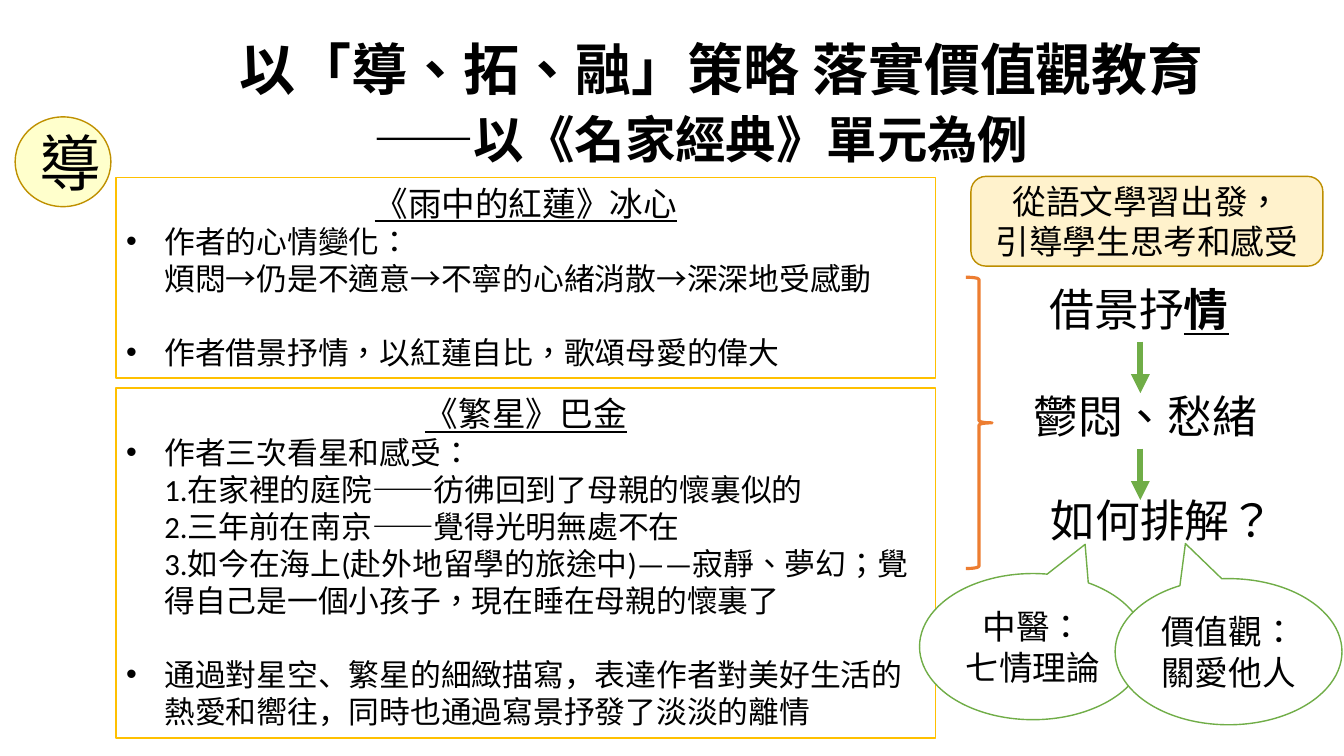
from lxml.etree import SubElement
from pptx import Presentation
from pptx.dml.color import RGBColor
from pptx.enum.lang import MSO_LANGUAGE_ID as Language
from pptx.enum.shapes import MSO_CONNECTOR as Connector, MSO_SHAPE as Shape
from pptx.enum.text import MSO_ANCHOR as Anchor, MSO_AUTO_SIZE as AutoSize, PP_ALIGN as Align
from pptx.oxml.ns import qn
from pptx.util import Inches, Pt

FONT = "Calibri"
BLACK, WHITE, GOLD, GREEN, ORANGE = "000000", "FFFFFF", "FFC000", "70AD47", "ED7D31"
TAIWAN, MAINLAND = Language.TRADITIONAL_CHINESE, Language.SIMPLIFIED_CHINESE

LOTUS_POINTS = [
    ("作者的心情變化：\v煩悶→仍是不適意→不寧的心緒消散→深深地受感動", TAIWAN),
    ("作者借景抒情，以紅蓮自比，歌頌母愛的偉大", TAIWAN),
]
STARS_POINTS = [
    ("作者三次看星和感受：\v1.在家裡的庭院——彷彿回到了母親的懷裏似的"
     "\v2.三年前在南京——覺得光明無處不在"
     "\v3.如今在海上(赴外地留學的旅途中)——寂靜、夢幻；覺得自己是一個小孩子，現在睡在母親的懷裏了",
     TAIWAN),
    ("通過對星空、繁星的細緻描寫，表達作者對美好生活的熱愛和嚮往，同時也通過寫景抒發了淡淡的離情",
     MAINLAND),
]


def color(hex_string):
    """Turn a hex string into a colour."""
    return RGBColor.from_string(hex_string)


def place(box, left, top, width, height):
    """Move and size a box, in inches."""
    box.left, box.top = Inches(left), Inches(top)
    box.width, box.height = Inches(width), Inches(height)


def outline(box, fill, line, weight=1):
    """Fill and outline a box; no fill colour leaves it open."""
    if fill:
        box.fill.solid()
        box.fill.fore_color.rgb = color(fill)
    else:
        box.fill.background()
    box.line.color.rgb = color(line)
    box.line.width = Pt(weight)


def style(para, size, align=Align.CENTER, bold=False, language=TAIWAN):
    """Set the alignment and font of a paragraph."""
    para.alignment = align
    para.font.name = FONT
    para.font.size = Pt(size)
    para.font.bold = bold
    para.font.color.rgb = color(BLACK)
    para.font.language_id = language


def set_bullet(para, char=None):
    """Give a paragraph a hanging bullet, or none."""
    props = para._p.get_or_add_pPr()
    indent = Inches(0.38) if char else 0
    props.set("marL", str(indent))
    props.set("indent", str(-indent))
    if char:
        SubElement(props, qn("a:buFont"), typeface="Arial")
        SubElement(props, qn("a:buChar"), char=char)
    else:
        SubElement(props, qn("a:buNone"))


def fill_heading(box, bounds, text, size):
    """Place a bold centred heading line."""
    place(box, *bounds)
    frame = box.text_frame
    frame.word_wrap = True
    frame.auto_size = AutoSize.NONE
    frame.vertical_anchor = Anchor.TOP
    para = frame.paragraphs[0]
    para.text = text
    para.line_spacing = 1.1
    style(para, size, bold=True)


def fill_reading(box, top, height, heading, points):
    """Fill a framed list with an underlined heading and bullet points."""
    place(box, 1.15, top, 8.13, height)
    outline(box, WHITE, GOLD)
    frame = box.text_frame
    frame.auto_size = AutoSize.NONE
    frame.vertical_anchor = Anchor.TOP
    para = frame.paragraphs[0]
    para.text = heading
    para.space_before = Pt(0)
    set_bullet(para)
    style(para, 24)
    para.font.underline = True
    for number, (text, language) in enumerate(points):
        para = frame.add_paragraph()
        para.text = text
        para.space_before = Pt(26.5 if number else 0)
        set_bullet(para, "•")
        style(para, 22, Align.LEFT, language=language)


def add_figure(slide, kind, bounds, fill, line, lines=(), size=24, weight=1, adjust=()):
    """Add a preset shape with centred lines of text."""
    figure = slide.shapes.add_shape(kind, *map(Inches, bounds))
    figure.shadow.inherit = False
    outline(figure, fill, line, weight)
    for index, value in enumerate(adjust):
        figure.adjustments[index] = value
    frame = figure.text_frame
    frame.vertical_anchor = Anchor.MIDDLE
    for index, text in enumerate(lines):
        para = frame.add_paragraph() if index else frame.paragraphs[0]
        para.text = text
        style(para, size)


def add_step(slide, left, top, width, text, stressed=""):
    """Add one step of the reasoning, with an optional stressed ending."""
    box = slide.shapes.add_textbox(Inches(left), Inches(top), Inches(width), Inches(0.64))
    box.text_frame.word_wrap = False
    para = box.text_frame.paragraphs[0]
    para.text = text
    style(para, 32, Align.LEFT)
    if stressed:
        span = para.add_run()
        span.text = stressed
        span.font.bold = True
        span.font.underline = True


def add_arrow(slide, left, top, length):
    """Add a thick downward arrow."""
    arrow = slide.shapes.add_connector(
        Connector.STRAIGHT, Inches(left), Inches(top), Inches(left), Inches(top + length))
    arrow.line.color.rgb = color(GREEN)
    arrow.line.width = Pt(4.5)
    SubElement(arrow.line._get_or_add_ln(), qn("a:tailEnd"), type="triangle")
    SubElement(arrow._element.spPr, qn("a:effectLst"))


def main():
    """Build the slide and save it."""
    deck = Presentation()
    deck.slide_width, deck.slide_height = Inches(13.33), Inches(7.5)
    slide = deck.slides.add_slide(deck.slide_layouts.get_by_name("Two Content"))
    title, lotus, stars = slide.placeholders

    fill_heading(title, (1.55, 0.23, 11.22, 0.7), "以「導、拓、融」策略 落實價值觀教育", 40)
    subtitle = slide.shapes.add_textbox(0, 0, 0, 0)
    fill_heading(subtitle, (3.48, 0.96, 6.94, 0.7), "——以《名家經典》單元為例", 36)
    add_figure(slide, Shape.OVAL, (0.15, 1.16, 0.95, 0.89), "FFFFCC", "BF9000", ["導"], 44)

    fill_reading(lotus, 1.76, 1.99, "《雨中的紅蓮》冰心", LOTUS_POINTS)
    fill_reading(stars, 3.85, 3.47, "《繁星》巴金", STARS_POINTS)

    add_figure(slide, Shape.RIGHT_BRACE, (9.58, 2.75, 0.26, 2.89), None, ORANGE, weight=2.25)
    add_step(slide, 10.31, 2.75, 2, "借景抒", "情")
    add_step(slide, 10.15, 3.81, 2.45, "鬱悶、愁緒")
    add_step(slide, 10.32, 4.84, 2.45, "如何排解？")
    for top in (3.39, 4.45):
        add_arrow(slide, 11.31, top, 0.51)

    add_figure(slide, Shape.OVAL_CALLOUT, (9.12, 5.69, 2.25, 1.45), WHITE, GREEN,
               ["中醫：", "七情理論"], adjust=(0.23, -0.7))
    add_figure(slide, Shape.OVAL_CALLOUT, (11.06, 5.74, 2.25, 1.45), WHITE, GREEN,
               ["價值觀：關愛他人"], adjust=(-0.19, -0.74))
    add_figure(slide, Shape.ROUNDED_RECTANGLE, (9.63, 1.75, 3.49, 0.89), "FFF2CC", "BD8E00",
               ["從語文學習出發，", "引導學生思考和感受"])
    deck.save("out.pptx")


if __name__ == "__main__":
    main()
